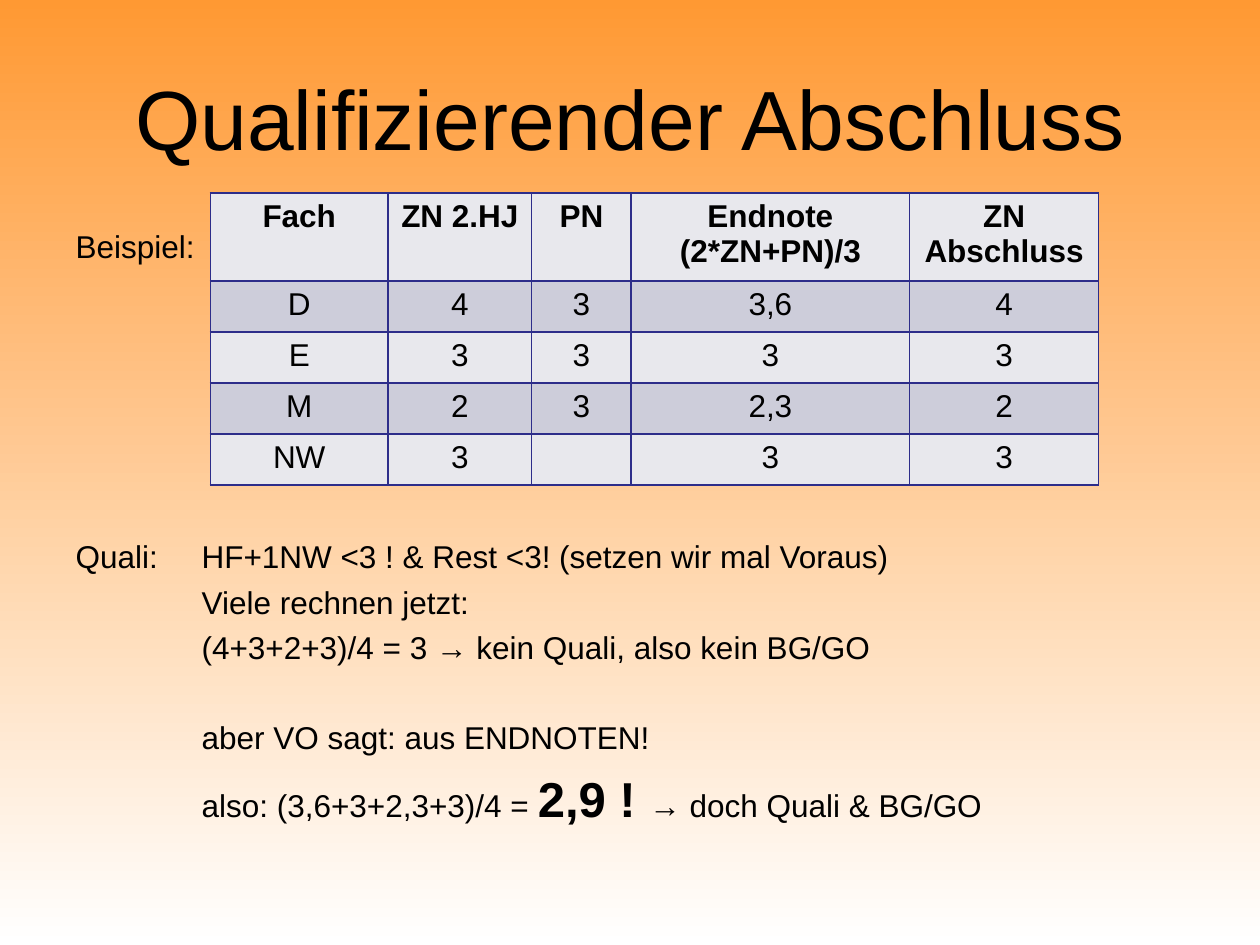
from dataclasses import dataclass

from lxml.etree import SubElement
from pptx import Presentation
from pptx.dml.color import RGBColor
from pptx.enum.text import MSO_ANCHOR, MSO_AUTO_SIZE, PP_ALIGN
from pptx.oxml import parse_xml
from pptx.oxml.ns import nsdecls, qn
from pptx.util import Inches, Pt


@dataclass(frozen=True)
class Theme:
    font: str = "Arial"
    text: str = "000000"
    sky: str = "FF9933"
    ground: str = "FFFFFF"
    light_row: str = "E8E8ED"
    dark_row: str = "CDCDDA"
    border: str = "2D2D8A"
    title_size: float = 48
    body_size: float = 18
    accent_size: float = 28
    line_gap: float = 4.5
    accent_gap: float = 7.4


THEME = Theme()
LINE_PITCH = THEME.body_size * 1.15 + THEME.line_gap

# Content
TITLE = "Qualifizierender Abschluss"
GRADES = [
    ("Fach", "ZN 2.HJ", "PN", "Endnote\n(2*ZN+PN)/3", "ZN Abschluss"),
    ("D", "4", "3", "3,6", "4"),
    ("E", "3", "3", "3", "3"),
    ("M", "2", "3", "2,3", "2"),
    ("NW", "3", "", "3", "3"),
]
# Each line: lines left free above it, starts at the margin, runs (text, is accent)
BODY = [
    (0, True, [("Beispiel:", False)]),
    (6, True, [("Quali:\tHF+1NW <3 ! & Rest <3! (setzen wir mal Voraus)", False)]),
    (0, False, [("Viele rechnen jetzt:", False)]),
    (0, False, [("(4+3+2+3)/4 = 3 → kein Quali, also kein BG/GO", False)]),
    (1, False, [("aber VO sagt: aus ENDNOTEN!", False)]),
    (0, False, [("also: (3,6+3+2,3+3)/4 = ", False), ("2,9 ! ", True),
                ("→ doch Quali & BG/GO", False)]),
]

# Layout in inches
TITLE_BOX = (0.5, 0.3, 9, 1.25)
BODY_BOX = (0.5, 1.75, 9, 4.95)
TABLE_ORIGIN = (1.67, 1.53)
COLUMNS = (1.41, 1.14, 0.79, 2.21, 1.5)
ROWS = (0.7,) + (0.405,) * 4
INDENT = Inches(1)


def place(shape, box):
    shape.left, shape.top, shape.width, shape.height = map(Inches, box)
    shape.text_frame.auto_size = MSO_AUTO_SIZE.NONE


def add_text(paragraph, text, size=THEME.body_size, bold=False):
    run = paragraph.add_run()
    run.text = text
    run.font.name = THEME.font
    run.font.size = Pt(size)
    run.font.bold = bold
    run.font.color.rgb = RGBColor.from_string(THEME.text)


def add_borders(cell):
    properties = cell._tc.get_or_add_tcPr()
    for position, side in enumerate(("lnL", "lnR", "lnT", "lnB")):
        properties.insert(position, parse_xml(
            f'<a:{side} {nsdecls("a")} w="{Pt(1)}"><a:solidFill>'
            f'<a:srgbClr val="{THEME.border}"/></a:solidFill></a:{side}>'))


def fill_background(slide):
    fill = slide.background.fill
    fill.gradient()
    fill.gradient_angle = 270
    for stop, color in zip(fill.gradient_stops, (THEME.sky, THEME.ground)):
        stop.color.rgb = RGBColor.from_string(color)


def add_title(slide):
    title = slide.shapes.title
    place(title, TITLE_BOX)
    title.text_frame.vertical_anchor = MSO_ANCHOR.MIDDLE
    paragraph = title.text_frame.paragraphs[0]
    paragraph.alignment = PP_ALIGN.CENTER
    add_text(paragraph, TITLE, size=THEME.title_size)


def add_body(slide):
    body = slide.placeholders[1]
    place(body, BODY_BOX)
    frame = body.text_frame
    for index, (free_lines, at_margin, runs) in enumerate(BODY):
        paragraph = frame.add_paragraph() if index else frame.paragraphs[0]
        has_accent = any(accent for _, accent in runs)
        gap = THEME.accent_gap if has_accent else THEME.line_gap
        paragraph.space_before = Pt(free_lines * LINE_PITCH + gap)
        properties = paragraph._p.get_or_add_pPr()
        properties.set("marL", str(INDENT))
        properties.set("indent", str(-INDENT if at_margin else 0))
        SubElement(properties, qn("a:buNone"))
        for text, accent in runs:
            size = THEME.accent_size if accent else THEME.body_size
            add_text(paragraph, text, size=size, bold=accent)


def add_grades(slide):
    left, top = map(Inches, TABLE_ORIGIN)
    table = slide.shapes.add_table(len(ROWS), len(COLUMNS), left, top,
                                   Inches(sum(COLUMNS)), Inches(sum(ROWS))).table
    for column, width in zip(table.columns, COLUMNS):
        column.width = Inches(width)
    for row_index, (row, height) in enumerate(zip(table.rows, ROWS)):
        row.height = Inches(height)
        color = THEME.dark_row if row_index % 2 else THEME.light_row
        for cell, text in zip(row.cells, GRADES[row_index]):
            cell.fill.solid()
            cell.fill.fore_color.rgb = RGBColor.from_string(color)
            add_borders(cell)
            for index, line in enumerate(text.split("\n")):
                frame = cell.text_frame
                paragraph = frame.add_paragraph() if index else frame.paragraphs[0]
                paragraph.alignment = PP_ALIGN.CENTER
                if line:
                    add_text(paragraph, line, bold=row_index == 0)


def main():
    presentation = Presentation()
    presentation.slide_width, presentation.slide_height = Inches(10), Inches(7.5)
    slide = presentation.slides.add_slide(presentation.slide_layouts[1])
    fill_background(slide)
    add_title(slide)
    add_body(slide)
    add_grades(slide)
    presentation.save("out.pptx")


if __name__ == "__main__":
    main()
